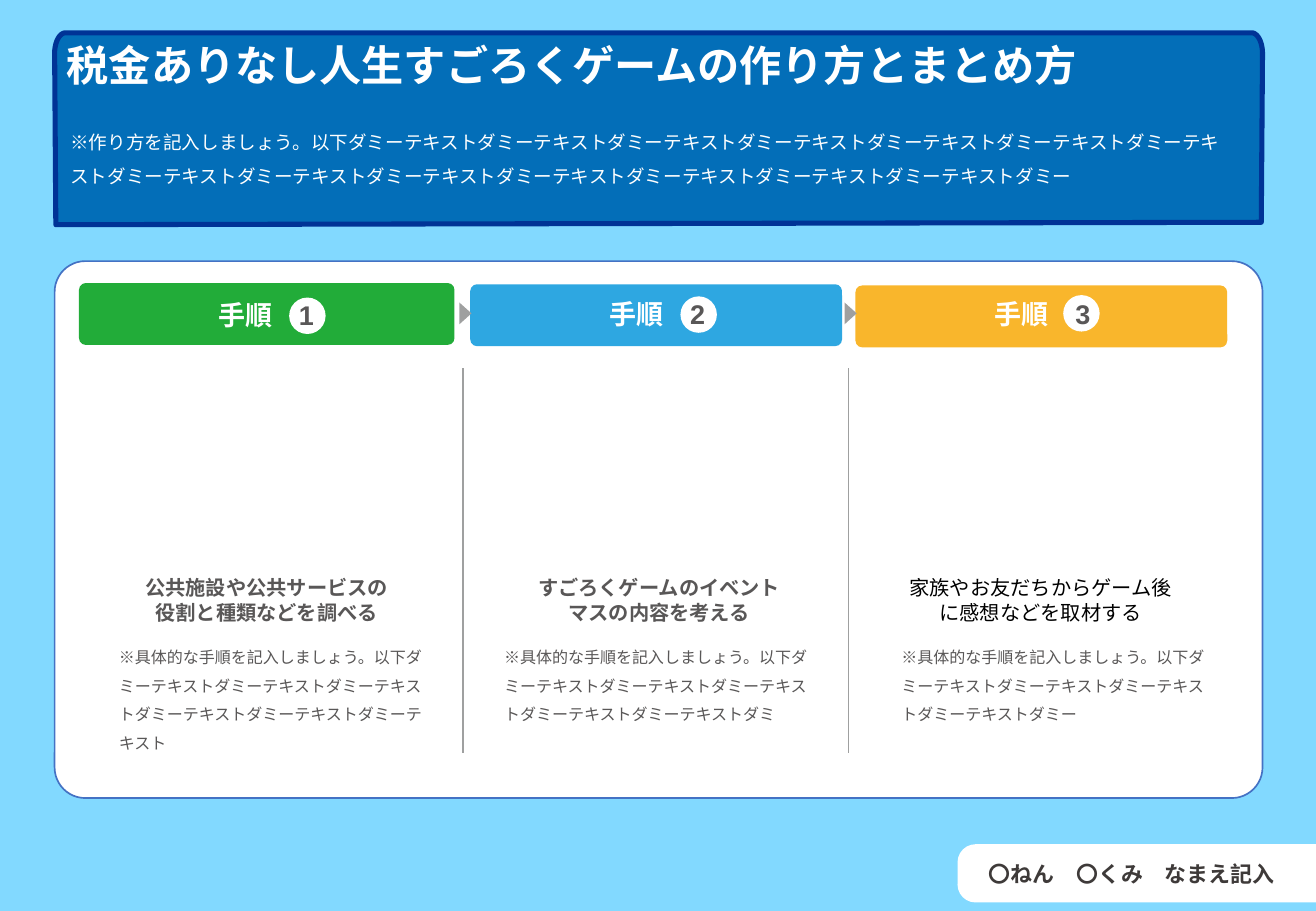
from dataclasses import dataclass
from math import cos, pi, sin

from lxml import etree
from pptx import Presentation
from pptx.dml.color import RGBColor
from pptx.enum.shapes import MSO_CONNECTOR, MSO_SHAPE
from pptx.enum.text import MSO_ANCHOR, MSO_AUTO_SIZE, PP_ALIGN
from pptx.oxml.ns import qn
from pptx.util import Inches, Pt

ROUNDED = MSO_SHAPE.ROUNDED_RECTANGLE
TAB = MSO_SHAPE.ROUND_2_SAME_RECTANGLE
OVAL = MSO_SHAPE.OVAL
TRIANGLE = MSO_SHAPE.ISOSCELES_TRIANGLE
STRAIGHT = MSO_CONNECTOR.STRAIGHT
TOP, MIDDLE = MSO_ANCHOR.TOP, MSO_ANCHOR.MIDDLE
NO_FIT, GROW = MSO_AUTO_SIZE.NONE, MSO_AUTO_SIZE.SHAPE_TO_FIT_TEXT
LEFT, CENTER = PP_ALIGN.LEFT, PP_ALIGN.CENTER


@dataclass(frozen=True)
class Theme:
    font: str = "Arial"
    sky: str = "82D9FF"
    header: str = "036EB8"
    header_line: str = "003396"
    panel_line: str = "4472C4"
    white: str = "FFFFFF"
    black: str = "000000"
    text: str = "595757"
    name: str = "3E3A39"
    grey: str = "9FA0A0"
    title_size: float = 25
    step_size: float = 16
    name_size: float = 13
    heading_size: float = 12
    intro_size: float = 11
    note_size: float = 9.5


@dataclass(frozen=True)
class Step:
    color: str
    left: float
    width: float
    badge_x: float
    heading_x: float
    note_x: float
    heading: tuple
    note: str
    heading_color: str
    heading_bold: bool


THEME = Theme()
NOTE_START = "※具体的な手順を記入しましょう。以下ダミーテキストダミーテキスト"
STEPS = [
    Step("22AC39", 0.65, 3.09, 1.73, 0.35, 0.23,
         ("公共施設や公共サービスの", "役割と種類などを調べる"),
         NOTE_START + "ダミーテキストダミーテキストダミーテキストダミーテキスト",
         THEME.text, True),
    Step("2EA7E1", 3.87, 3.06, 1.73, 0.36, 0.18,
         ("すごろくゲームのイベント", "マスの内容を考える"),
         NOTE_START + "ダミーテキストダミーテキストダミーテキストダミ",
         THEME.text, True),
    Step("F9B62C", 7.04, 3.06, 1.71, 0.33, 0.28,
         ("家族やお友だちからゲーム後に感想などを取材する",),
         NOTE_START + "ダミーテキストダミーテキストダミー",
         THEME.black, False),
]
INTRO = "※作り方を記入しましょう。以下" + "ダミーテキスト" * 14 + "ダミー"


def rgb(color):
    return RGBColor.from_string(color)


def paint(shape, fill, line=None, width=1):
    shape.shadow.inherit = False
    shape.fill.solid()
    shape.fill.fore_color.rgb = rgb(fill)
    if line:
        shape.line.color.rgb = rgb(line)
        shape.line.width = Pt(width)
    else:
        shape.line.fill.background()


def add_box(slide, kind, box, fill, line=None, adjust=(), rotation=0):
    shape = slide.shapes.add_shape(kind, *map(Inches, box))
    paint(shape, fill, line)
    for index, value in enumerate(adjust):
        shape.adjustments[index] = value
    shape.rotation = rotation


def write(shape, paragraphs, size, bold=False, align=LEFT, spacing=1.0,
          anchor=TOP, fit=GROW):
    """Each paragraph is a list of (text, color) runs."""
    frame = shape.text_frame
    frame_format = {"word_wrap": True, "auto_size": fit, "vertical_anchor": anchor}
    for key, value in frame_format.items():
        setattr(frame, key, value)
    for index, runs in enumerate(paragraphs):
        paragraph = frame.add_paragraph() if index else frame.paragraphs[0]
        paragraph.alignment = align
        paragraph.line_spacing = spacing
        for text, color in runs:
            run = paragraph.add_run()
            run.text = text
            font_format = {"name": THEME.font, "size": Pt(size), "bold": bold}
            for key, value in font_format.items():
                setattr(run.font, key, value)
            run.font.color.rgb = rgb(color)


def add_text(slide, box, paragraphs, size, **text_format):
    write(slide.shapes.add_textbox(*map(Inches, box)), paragraphs, size, **text_format)


def add_header(slide, left, top, width, height):
    # Banner with rounded upper corners and a slightly slanted base
    rx, ry, right = 0.09, 0.17, left + width
    angles = [pi / 2 * i / 12 for i in range(13)]
    outline = [(left + rx - rx * cos(a), top + ry - ry * sin(a)) for a in angles]
    outline += [(right - rx + rx * sin(a), top + ry - ry * cos(a)) for a in angles]
    outline += [(right - 0.01, top + height - 0.02), (left + 0.01, top + height)]
    points = [(Inches(x), Inches(y)) for x, y in outline]
    builder = slide.shapes.build_freeform(*points[0])
    builder.add_line_segments(points[1:], close=True)
    paint(builder.convert_to_shape(), THEME.header, THEME.header_line, 3)

    # Title, brought in front of the banner
    title = slide.shapes.title
    title.element.getparent().append(title.element)
    place = {"left": left, "top": top, "width": width, "height": 0.6}
    for key, value in place.items():
        setattr(title, key, Inches(value))
    write(title, [[("税金ありなし人生すごろくゲームの作り方とまとめ方", THEME.white)]],
          THEME.title_size, bold=True, fit=NO_FIT)

    # Introduction
    add_text(slide, (left + 0.03, top + 0.67, 9.75, 0.63),
             [[(INTRO, THEME.white)]], THEME.intro_size, spacing=1.5)


def add_divider(slide, x, top):
    add_box(slide, TRIANGLE, (x - 0.07, top + 0.2, 0.18, 0.1), THEME.grey, rotation=90)
    divider = slide.shapes.add_connector(
        STRAIGHT, Inches(x), Inches(top + 0.7), Inches(x), Inches(top + 3.87))
    divider.line.color.rgb = rgb(THEME.grey)
    divider.line.width = Pt(0.75)
    etree.SubElement(divider.element.spPr, qn("a:effectLst"))


def add_step(slide, top, index, step):
    left, shift = step.left, 0.01 * index
    # Bar with its number
    add_box(slide, ROUNDED, (left, top + shift, step.width, 0.51), step.color,
            adjust=[0.11])
    add_box(slide, OVAL, (left + step.badge_x, top + 0.12 - shift, 0.3, 0.3), THEME.white)
    add_text(slide, (left + 0.71, top + (0.07 if index else 0.08), 1.66, 0.37),
             [[("手順\u3000".replace("\u3000", "　"), THEME.white),
               (str(index + 1), THEME.text)]],
             THEME.step_size, bold=True, align=CENTER)
    # Heading and details
    add_text(slide, (left + step.heading_x, top + 2.36, 2.39, 0.5),
             [[(line, step.heading_color)] for line in step.heading],
             THEME.heading_size, bold=step.heading_bold, align=CENTER)
    add_text(slide, (left + step.note_x, top + 2.87, 2.73, 0.8),
             [[(step.note, THEME.text)]], THEME.note_size, spacing=1.5)
    if index:
        add_divider(slide, left - 0.06, top)


def add_steps_panel(slide, left, top, width, height):
    add_box(slide, ROUNDED, (left, top, width, height), THEME.white,
            THEME.panel_line, adjust=[0.057])
    for index, step in enumerate(STEPS):
        add_step(slide, top + 0.18, index, step)


def add_name_tab(slide, left, top, width, height):
    # The tab is turned, so its box is laid out around the same centre
    turned = (left + (width - height) / 2, top + (height - width) / 2, height, width)
    add_box(slide, TAB, turned, THEME.white, adjust=[0.31, 0], rotation=270)
    add_text(slide, (left + 0.16, top + 0.1, 2.79, 0.29),
             [[("〇ねん　〇くみ　なまえ記入", THEME.name)]],
             THEME.name_size, bold=True, anchor=MIDDLE, fit=NO_FIT)


def main():
    deck = Presentation()
    deck.slide_width, deck.slide_height = Inches(10.83), Inches(7.5)
    slide = deck.slides.add_slide(deck.slide_layouts[5])
    slide.background.fill.solid()
    slide.background.fill.fore_color.rgb = rgb(THEME.sky)
    add_header(slide, 0.45, 0.27, 9.94, 1.58)
    add_steps_panel(slide, 0.45, 2.15, 9.94, 4.42)
    add_name_tab(slide, 7.88, 6.95, 2.95, 0.48)
    deck.save("out.pptx")


if __name__ == "__main__":
    main()
